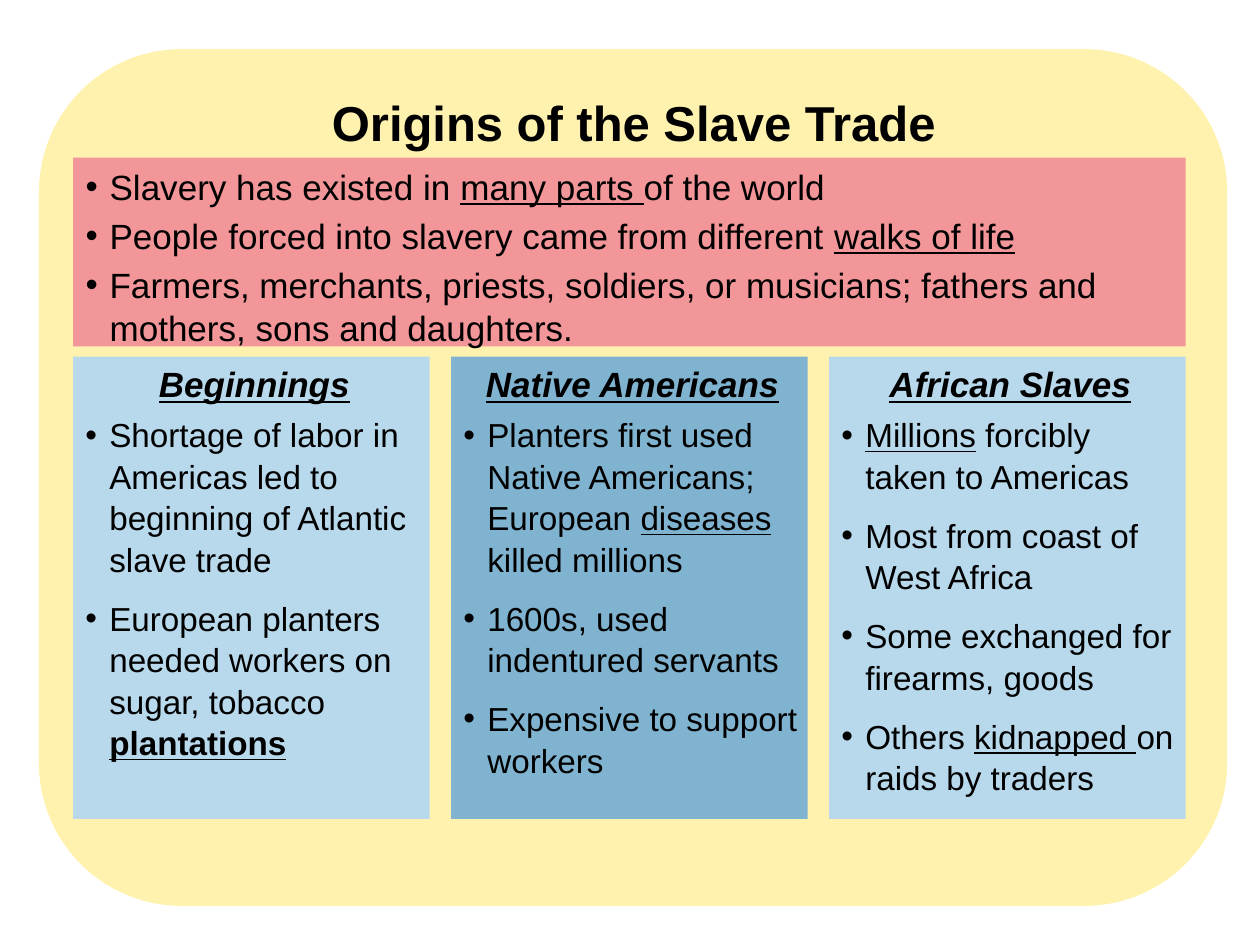
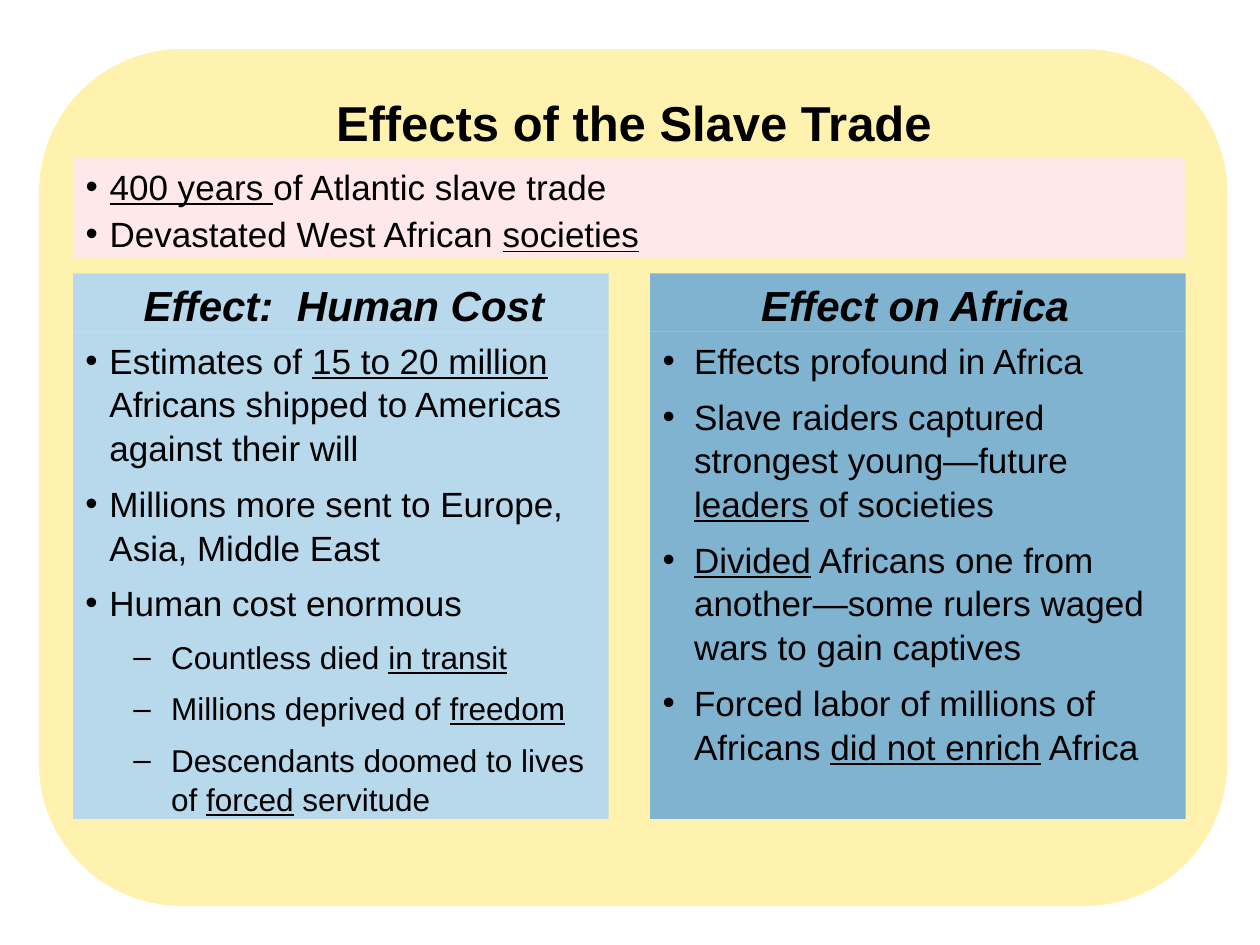
import pptx
import pptx.util
import pptx.dml.color
import pptx.enum.shapes
import pptx.enum.text
from lxml import etree

Inches, Pt = pptx.util.Inches, pptx.util.Pt
ALIGN = pptx.enum.text.PP_ALIGN
ANCHOR = pptx.enum.text.MSO_ANCHOR
SHAPE = pptx.enum.shapes.MSO_SHAPE
A = "{http://schemas.openxmlformats.org/drawingml/2006/main}"


class Theme:
    font = "Arial"
    ink = "000000"
    panel = "FFF2AE"
    strong_band, pale_band = "F29699", "FEE8EA"
    columns = ["B8D9EC", "80B3D0"]
    title_size, big_head_size = 28, 24
    list_size, small_size, sub_size = 20, 19, 18
    spacing = 1.04


# Shared content area
LEFT, WIDTH, BAND_TOP, BOTTOM = 0.58, 8.83, 1.25, 6.5
FRAME = {"word_wrap": True, "auto_size": pptx.enum.text.MSO_AUTO_SIZE.NONE,
         "margin_left": Inches(0.1), "margin_right": Inches(0.05),
         "margin_top": Inches(0.05), "margin_bottom": Inches(0.05)}


def apply(obj, **formats):
    for name, value in formats.items():
        setattr(obj, name, value)


def rgb(value):
    return pptx.dml.color.RGBColor.from_string(value)


class Deck:
    def __init__(self, theme):
        self.theme = theme
        self.prs = pptx.Presentation()
        apply(self.prs, slide_width=Inches(10), slide_height=Inches(7.5))
        self.layout = self.prs.slide_layouts[1]
        self.slide = None

    def new_slide(self, title):
        first = self.slide is None
        self.slide = self.prs.slides.add_slide(self.layout)
        if first:
            self.panel()
        sp = self.slide.shapes.title
        self.place(sp, 0.67, 0.67, 8.67, 0.58)
        self.heading(sp, title, self.theme.title_size, anchor=ANCHOR.BOTTOM, bold=True)

    def panel(self):
        """Yellow panel, kept on the layout behind every slide."""
        sp = self.box(0.31, 0.39, 9.43, 6.8, self.theme.panel, SHAPE.ROUNDED_RECTANGLE)
        self.layout.shapes.element.insert(2, sp.element)

    def place(self, sp, x, y, w, h):
        apply(sp, left=Inches(x), top=Inches(y), width=Inches(w), height=Inches(h))

    def fill(self, sp, color):
        sp.fill.solid()
        sp.fill.fore_color.rgb = rgb(color)

    def box(self, x, y, w, h, color, kind=SHAPE.RECTANGLE):
        sp = self.slide.shapes.add_shape(kind, Inches(x), Inches(y), Inches(w), Inches(h))
        sp.shadow.inherit = False
        sp.line.fill.background()
        self.fill(sp, color)
        return sp

    def runs(self, p, text, size, **font):
        """Text between underscores is underlined; a leading * makes it bold too."""
        for i, part in enumerate(text.split("_")):
            if not part:
                continue
            r = p.add_run()
            r.text = part.lstrip("*")
            formats = {"name": self.theme.font, "size": Pt(size), "underline": i % 2 == 1,
                       "bold": part.startswith("*"), **font}
            apply(r.font, **formats)
            r.font.color.rgb = rgb(self.theme.ink)

    def heading(self, sp, text, size, anchor=ANCHOR.TOP, **font):
        tf = sp.text_frame
        apply(tf, **FRAME, vertical_anchor=anchor)
        p = tf.paragraphs[0]
        p.alignment = ALIGN.CENTER
        self.runs(p, text, size, **font)

    def bullet(self, p, char, margin, hanging):
        pPr = p._p.get_or_add_pPr()
        pPr.set("marL", str(Inches(margin)))
        pPr.set("indent", str(-Inches(hanging)))
        etree.SubElement(pPr, A + "buFont", typeface=self.theme.font)
        etree.SubElement(pPr, A + "buChar", char=char)

    def bullets(self, sp, items, size, after, indent=0.19):
        """Bulleted list; an item starting with a dash goes one level down."""
        tf = sp.text_frame
        apply(tf, **FRAME, vertical_anchor=ANCHOR.TOP)
        for i, item in enumerate(items):
            p = tf.paragraphs[0] if i == 0 else tf.add_paragraph()
            sub = item.startswith("–")
            if sub:
                self.bullet(p, "–", 0.68, 0.3)
            else:
                self.bullet(p, "•", indent, indent)
            apply(p, level=int(sub), alignment=ALIGN.LEFT, line_spacing=self.theme.spacing,
                  space_before=Pt(0), space_after=Pt(after))
            self.runs(p, item.lstrip("–"), self.theme.sub_size if sub else size)

    def band(self, items, height, color, after):
        sp = self.slide.placeholders[1]
        self.place(sp, LEFT, BAND_TOP, WIDTH, height)
        self.fill(sp, color)
        self.bullets(sp, items, self.theme.list_size, after)

    def columns(self, columns, top, gap, head_height, head_size, size, after, indents):
        """Equal columns of (heading, items) in alternating blues."""
        width = (WIDTH - gap * (len(columns) - 1)) / len(columns)
        body_top = top + head_height
        for i, (heading, items) in enumerate(columns):
            x = LEFT + i * (width + gap)
            color = self.theme.columns[i % 2]
            sp = self.box(x, body_top, width, BOTTOM - body_top, color)
            self.bullets(sp, items, size, after, indents[i])
            sp = self.box(x, top, width, head_height, color)
            self.heading(sp, heading, head_size, bold=True, italic=True)


def main():
    theme = Theme()
    deck = Deck(theme)

    # Origins
    deck.new_slide("Origins of the Slave Trade")
    deck.band([
        "Slavery has existed in _many parts _of the world",
        "People forced into slavery came from different _walks of life_",
        "Farmers, merchants, priests, soldiers, or musicians; fathers and mothers, "
        "sons and daughters.",
    ], 1.5, theme.strong_band, after=3)
    deck.columns([
        ("_Beginnings_", [
            "Shortage of labor in Americas led to beginning of Atlantic slave trade",
            "European planters needed workers on sugar, tobacco _*plantations_",
        ]),
        ("_Native Americans_", [
            "Planters first used Native Americans; European _diseases _killed millions",
            "1600s, used indentured servants",
            "Expensive to support workers",
        ]),
        ("_African Slaves_", [
            "_Millions_ forcibly taken to Americas",
            "Most from coast of West Africa",
            "Some exchanged for firearms, goods",
            "Others _kidnapped _on raids by traders",
        ]),
    ], top=2.83, gap=0.17, head_height=0.4, head_size=theme.list_size,
        size=theme.small_size, after=10, indents=[0.19] * 3)

    # Effects
    deck.new_slide("Effects of the Slave Trade")
    deck.band([
        "_400 years _of Atlantic slave trade",
        "Devastated West African _societies_",
    ], 0.8, theme.pale_band, after=2)
    deck.columns([
        ("Effect:  Human Cost", [
            "Estimates of _15 to 20 million _Africans shipped to Americas against their will",
            "Millions more sent to Europe, Asia, Middle East",
            "Human cost enormous",
            "–Countless died _in transit_",
            "–Millions deprived of _freedom_",
            "–Descendants doomed to lives of _forced_ servitude",
        ]),
        ("Effect on Africa ", [
            "Effects profound in Africa",
            "Slave raiders captured strongest young—future _leaders_ of societies",
            "_Divided_ Africans one from another—some rulers waged wars to gain captives",
            "Forced labor of millions of Africans _did not enrich_ Africa",
        ]),
    ], top=2.17, gap=0.33, head_height=0.46, head_size=theme.big_head_size,
        size=theme.list_size, after=7, indents=[0.19, 0.25])

    deck.prs.save("out.pptx")


if __name__ == "__main__":
    main()
